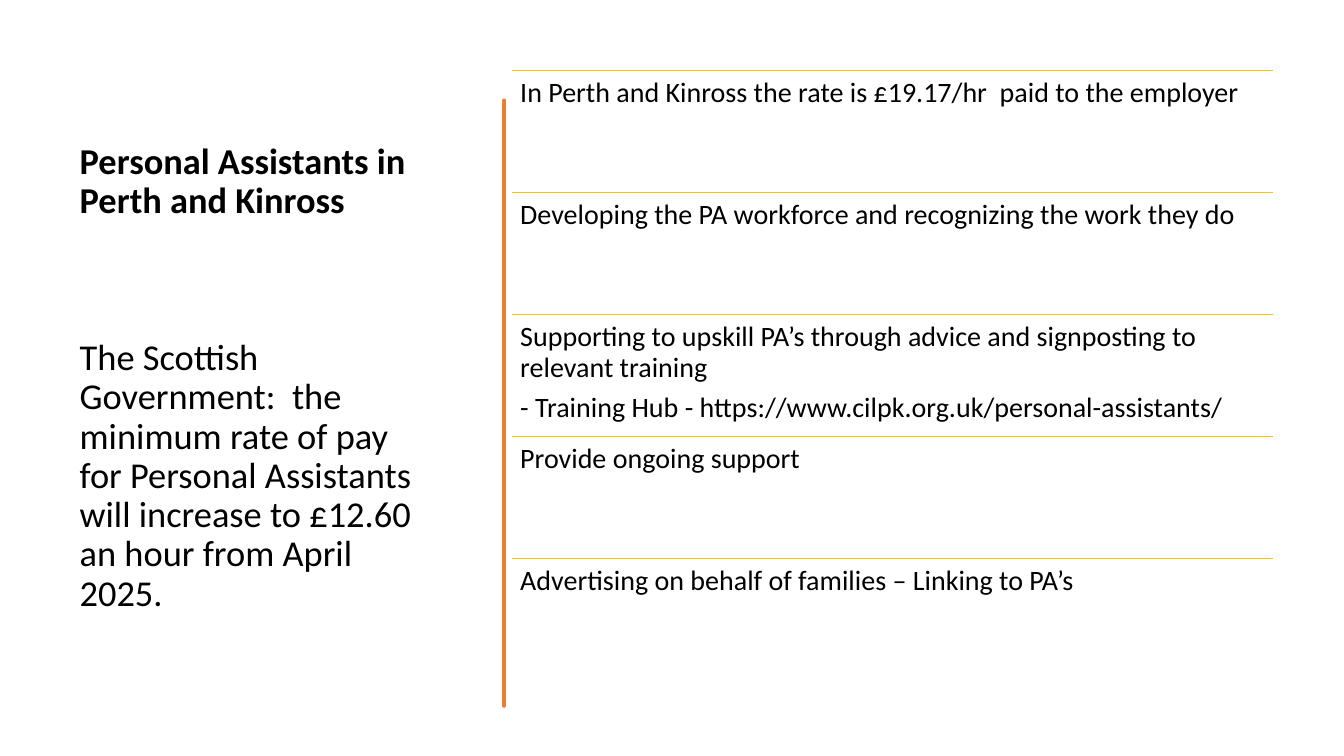
from dataclasses import dataclass

from lxml.etree import SubElement
from pptx import Presentation
from pptx.dml.color import RGBColor
from pptx.enum.shapes import MSO_CONNECTOR
from pptx.enum.text import MSO_ANCHOR, MSO_AUTO_SIZE, PP_ALIGN
from pptx.oxml.ns import qn
from pptx.slide import Slide
from pptx.util import Inches, Pt

BLACK = RGBColor(0x00, 0x00, 0x00)
ORANGE = RGBColor(0xED, 0x7D, 0x31)
GOLD = RGBColor(0xFF, 0xC0, 0x00)
FONT = "Calibri"

GRID_TOP = Inches(0.7)
ROW_HEIGHT = Inches(1.21)
TITLE_LEFT, TITLE_WIDTH = Inches(0.69), Inches(3.74)
LIST_LEFT, LIST_WIDTH = Inches(5.08), Inches(7.55)
TEXT_INSET = Inches(0.08)

BRUSH_RIGHT_EDGE = [
    (4.75, 0.84), (4.76, 1.15), (4.75, 1.46), (4.74, 1.8), (4.75, 2.26),
    (4.75, 2.94), (4.76, 3.3), (4.75, 3.56), (4.76, 3.95), (4.75, 4.36),
    (4.73, 4.72), (4.75, 5.1), (4.76, 5.48), (4.75, 5.84), (4.74, 6.2), (4.75, 6.76),
]
BRUSH_LEFT_EDGE = [
    (4.73, 6.76), (4.72, 6.45), (4.73, 6.13), (4.73, 5.57), (4.72, 5.15),
    (4.73, 4.77), (4.72, 4.46), (4.73, 4.15), (4.73, 3.35), (4.72, 2.9),
    (4.73, 2.5), (4.74, 2.1), (4.73, 1.81), (4.72, 1.6), (4.74, 1.2), (4.73, 0.84),
]


@dataclass(frozen=True)
class ListRow:
    row: int
    text: str

    @property
    def top(self) -> int:
        return GRID_TOP + self.row * ROW_HEIGHT


ROW_TEXTS = [
    "In Perth and Kinross the rate is £19.17/hr  paid to the employer",
    "Developing the PA workforce and recognizing the work they do",
    "Supporting to upskill PA’s through advice and signposting to relevant training\n"
    "- Training Hub - https://www.cilpk.org.uk/personal-assistants/",
    "Provide ongoing support",
    "Advertising on behalf of families – Linking to PA’s",
]


def format_paragraph(paragraph, size: float, bold: bool = False) -> None:
    paragraph.alignment = PP_ALIGN.LEFT
    paragraph.line_spacing = 0.9
    for run in paragraph.runs:
        run.font.name = FONT
        run.font.size = Pt(size)
        run.font.bold = bold
        run.font.color.rgb = BLACK


def add_title(slide: Slide) -> None:
    title = slide.shapes.title
    title.left, title.top = TITLE_LEFT, GRID_TOP
    title.width, title.height = TITLE_WIDTH, Inches(6.11)
    text_frame = title.text_frame
    text_frame.text = (
        "Personal Assistants in Perth and Kinross\n"
        "The Scottish Government:  the minimum rate of pay for Personal Assistants "
        "will increase to £12.60 an hour from April 2025."
    )
    text_frame.word_wrap = True
    text_frame.auto_size = MSO_AUTO_SIZE.NONE
    text_frame.vertical_anchor = MSO_ANCHOR.MIDDLE
    heading, statement = text_frame.paragraphs
    format_paragraph(heading, 26, bold=True)
    format_paragraph(statement, 26)
    statement.space_before = Pt(84)


def add_brush_stroke(slide: Slide) -> None:
    start, *outline = BRUSH_RIGHT_EDGE + BRUSH_LEFT_EDGE
    builder = slide.shapes.build_freeform(*start, scale=Inches(1))
    builder.add_line_segments(outline, close=True)
    stroke = builder.convert_to_shape()
    stroke.shadow.inherit = False
    stroke.fill.solid()
    stroke.fill.fore_color.rgb = ORANGE
    stroke.line.color.rgb = ORANGE
    stroke.line.width = Pt(3.25)


def add_list_row(slide: Slide, item: ListRow) -> None:
    rule = slide.shapes.add_connector(
        MSO_CONNECTOR.STRAIGHT, LIST_LEFT, item.top, LIST_LEFT + LIST_WIDTH, item.top
    )
    rule.line.color.rgb = GOLD
    rule.line.width = Pt(1)
    SubElement(rule._element.spPr, qn("a:effectLst"))

    box = slide.shapes.add_textbox(LIST_LEFT, item.top, LIST_WIDTH, ROW_HEIGHT)
    text_frame = box.text_frame
    text_frame.text = item.text
    text_frame.word_wrap = True
    text_frame.margin_left = text_frame.margin_right = TEXT_INSET
    text_frame.margin_top = text_frame.margin_bottom = TEXT_INSET
    for paragraph in text_frame.paragraphs:
        format_paragraph(paragraph, 20)
        paragraph.space_after = Pt(7)


def main() -> None:
    presentation = Presentation()
    presentation.slide_width = Inches(13.33)
    presentation.slide_height = Inches(7.5)
    slide = presentation.slides.add_slide(presentation.slide_layouts[5])
    add_title(slide)
    add_brush_stroke(slide)
    for row, text in enumerate(ROW_TEXTS):
        add_list_row(slide, ListRow(row, text))
    presentation.save("out.pptx")


if __name__ == "__main__":
    main()
